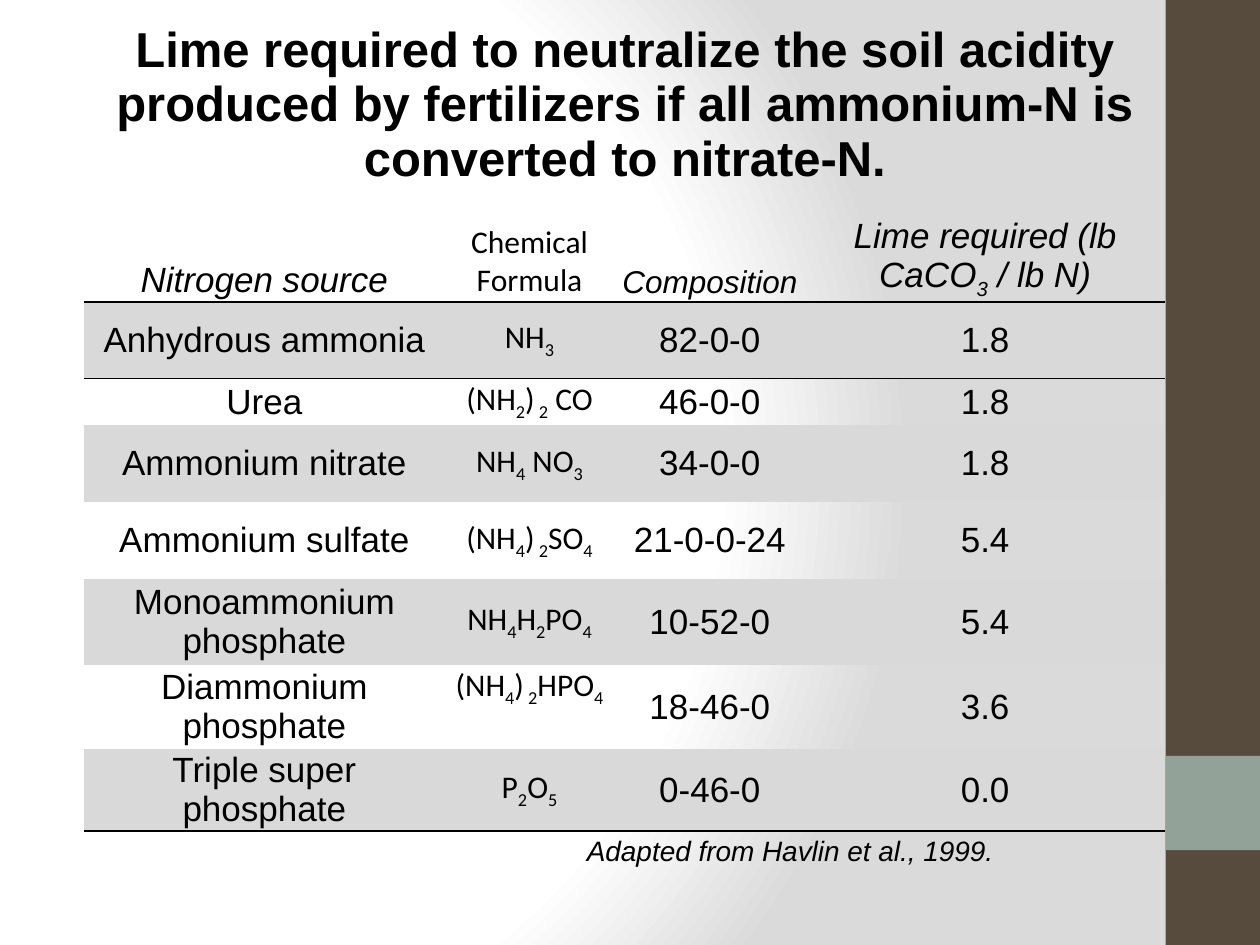
from dataclasses import dataclass

from lxml.etree import SubElement
from pptx import Presentation
from pptx.dml.color import RGBColor
from pptx.enum.shapes import MSO_SHAPE
from pptx.enum.text import MSO_ANCHOR, PP_ALIGN
from pptx.oxml import parse_xml
from pptx.oxml.ns import nsdecls, qn
from pptx.slide import Slide
from pptx.table import Table, _Cell
from pptx.util import Cm, Pt

COLORS = {
    "text": "000000",
    "stripe": "D9D9D9",
    "side": "564B3C",
    "accent": "93A299",
    "light": "FFFFFF",
    "shade": "DADADA",
}
NO_STYLE = "{2D5ABB26-0587-4C30-8999-92F81FD0307C}"
COLUMN_WIDTHS = (7.26, 3.43, 3.84, 7.26)
TITLE_HEIGHT, HEADING_HEIGHT, CREDIT_HEIGHT = 3.35, 2.29, 0.84
INSET = Cm(0.03)


@dataclass
class Fertilizer:
    source: str
    formula: str
    composition: str
    lime: str
    height: float = 1.55
    formula_anchor: MSO_ANCHOR = MSO_ANCHOR.MIDDLE


@dataclass
class Panel:
    top: float
    height: float
    color: str


TITLE = (
    "Lime required to neutralize the soil acidity produced by fertilizers "
    "if all ammonium-N is converted to nitrate-N."
)
# Parts between bars alternate between baseline and subscript.
HEADINGS = (
    ("Nitrogen source", {"size": 20, "italic": True}),
    ("Chemical Formula", {"size": 18, "font": "Calibri"}),
    ("Composition", {"size": 18, "italic": True}),
    ("Lime required (lb CaCO|3| / lb N)", {"size": 20, "italic": True}),
)
FERTILIZERS = (
    Fertilizer("Anhydrous ammonia", "NH|3", "82-0-0", "1.8"),
    Fertilizer("Urea", "(NH|2|)| 2| CO", "46-0-0", "1.8", 0.94),
    Fertilizer("Ammonium nitrate", "NH|4| NO|3", "34-0-0", "1.8"),
    Fertilizer("Ammonium sulfate", "(NH|4|)| 2|SO|4", "21-0-0-24", "5.4"),
    Fertilizer("Monoammonium phosphate", "NH|4|H|2|PO|4", "10-52-0", "5.4", 1.73),
    Fertilizer("Diammonium phosphate", "(NH|4|)| 2|HPO|4", "18-46-0", "3.6", 1.7,
               MSO_ANCHOR.TOP),
    Fertilizer("Triple super phosphate", "P|2|O|5", "0-46-0", "0.0", 1.65),
)
PANELS = (Panel(0, 19.05, "side"), Panel(15.24, 1.9, "accent"))


def rgb(name: str) -> RGBColor:
    return RGBColor.from_string(COLORS[name])


def write(cell: _Cell, text: str, *, size: float = 20, font: str = "Arial",
          bold: bool = False, italic: bool = False,
          align: PP_ALIGN = PP_ALIGN.CENTER,
          anchor: MSO_ANCHOR = MSO_ANCHOR.MIDDLE, indent: float = 0) -> None:
    cell.margin_left = cell.margin_right = INSET
    cell.margin_top = cell.margin_bottom = INSET
    cell.vertical_anchor = anchor
    paragraph = cell.text_frame.paragraphs[0]
    paragraph.alignment = align
    if indent:
        paragraph._p.get_or_add_pPr().set("marL", str(Cm(indent)))
    for position, part in enumerate(text.split("|")):
        run = paragraph.add_run()
        run.text = part
        run.font.size = Pt(size)
        run.font.name = font
        run.font.bold = bold
        run.font.italic = italic
        run.font.color.rgb = rgb("text")
        if position % 2:
            run.font._element.set("baseline", "-25000")


def rule(cell: _Cell, side: str) -> None:
    line = parse_xml(
        f'<a:{side} {nsdecls("a")} w="{Pt(1)}"><a:solidFill>'
        f'<a:srgbClr val="{COLORS["text"]}"/></a:solidFill></a:{side}>'
    )
    cell._tc.get_or_add_tcPr().insert(0, line)


def paint_background(slide: Slide) -> None:
    slide.background.fill.gradient()
    gradient = slide.element.find(".//" + qn("a:gradFill"))
    for child in list(gradient):
        gradient.remove(child)
    stops = SubElement(gradient, qn("a:gsLst"))
    for percent, name in ((0, "light"), (75, "light"), (100, "shade")):
        stop = SubElement(stops, qn("a:gs"), pos=str(percent * 1000))
        SubElement(stop, qn("a:srgbClr"), val=COLORS[name])
    circle = SubElement(gradient, qn("a:path"), path="circle")
    SubElement(circle, qn("a:fillToRect"), l="20000", t="50000", r="100000", b="50000")


def draw_panel(slide: Slide, panel: Panel) -> None:
    bar = slide.shapes.add_shape(
        MSO_SHAPE.RECTANGLE, Cm(23.5), Cm(panel.top), Cm(1.9), Cm(panel.height)
    )
    bar.shadow.inherit = False
    bar.fill.solid()
    bar.fill.fore_color.rgb = rgb(panel.color)
    bar.line.fill.background()


def add_lime_table(slide: Slide) -> Table:
    heights = (TITLE_HEIGHT, HEADING_HEIGHT,
               *(item.height for item in FERTILIZERS), CREDIT_HEIGHT)
    frame = slide.shapes.add_table(
        len(heights), len(COLUMN_WIDTHS), Cm(1.7), Cm(0.43),
        Cm(sum(COLUMN_WIDTHS)), Cm(sum(heights)),
    )
    table = frame.table
    table.first_row = table.horz_banding = False
    table._tbl.tblPr.find(qn("a:tableStyleId")).text = NO_STYLE
    for column, width in zip(table.columns, COLUMN_WIDTHS):
        column.width = Cm(width)
    for row, height in zip(table.rows, heights):
        row.height = Cm(height)
    return table


def fill_lime_table(table: Table) -> None:
    last_column = len(COLUMN_WIDTHS) - 1
    credit_row = len(FERTILIZERS) + 2
    for row in (0, credit_row):
        table.cell(row, 0).merge(table.cell(row, last_column))
    write(table.cell(0, 0), TITLE, size=28, bold=True)
    write(table.cell(credit_row, 0), "Adapted from Havlin et al., 1999.", size=16,
          italic=True, align=PP_ALIGN.LEFT, anchor=MSO_ANCHOR.MIDDLE, indent=10.1)

    for column, (heading, style) in enumerate(HEADINGS):
        write(table.cell(1, column), heading, anchor=MSO_ANCHOR.BOTTOM, **style)

    for row, item in enumerate(FERTILIZERS, start=2):
        write(table.cell(row, 0), item.source)
        write(table.cell(row, 1), item.formula, size=18, font="Calibri",
              anchor=item.formula_anchor)
        write(table.cell(row, 2), item.composition)
        write(table.cell(row, 3), item.lime)

    for row in range(credit_row + 1):
        for column in range(last_column + 1):
            cell = table.cell(row, column)
            if 2 <= row < credit_row and row % 2 == 0:
                cell.fill.solid()
                cell.fill.fore_color.rgb = rgb("stripe")
            else:
                cell.fill.background()
            if row in (1, credit_row - 1):
                rule(cell, "lnB")
            elif row in (2, credit_row):
                rule(cell, "lnT")


def main() -> None:
    deck = Presentation()
    deck.slide_width, deck.slide_height = Cm(25.4), Cm(19.05)
    slide = deck.slides.add_slide(deck.slide_layouts[6])
    paint_background(slide)
    for panel in PANELS:
        draw_panel(slide, panel)
    fill_lime_table(add_lime_table(slide))
    deck.save("out.pptx")


if __name__ == "__main__":
    main()
